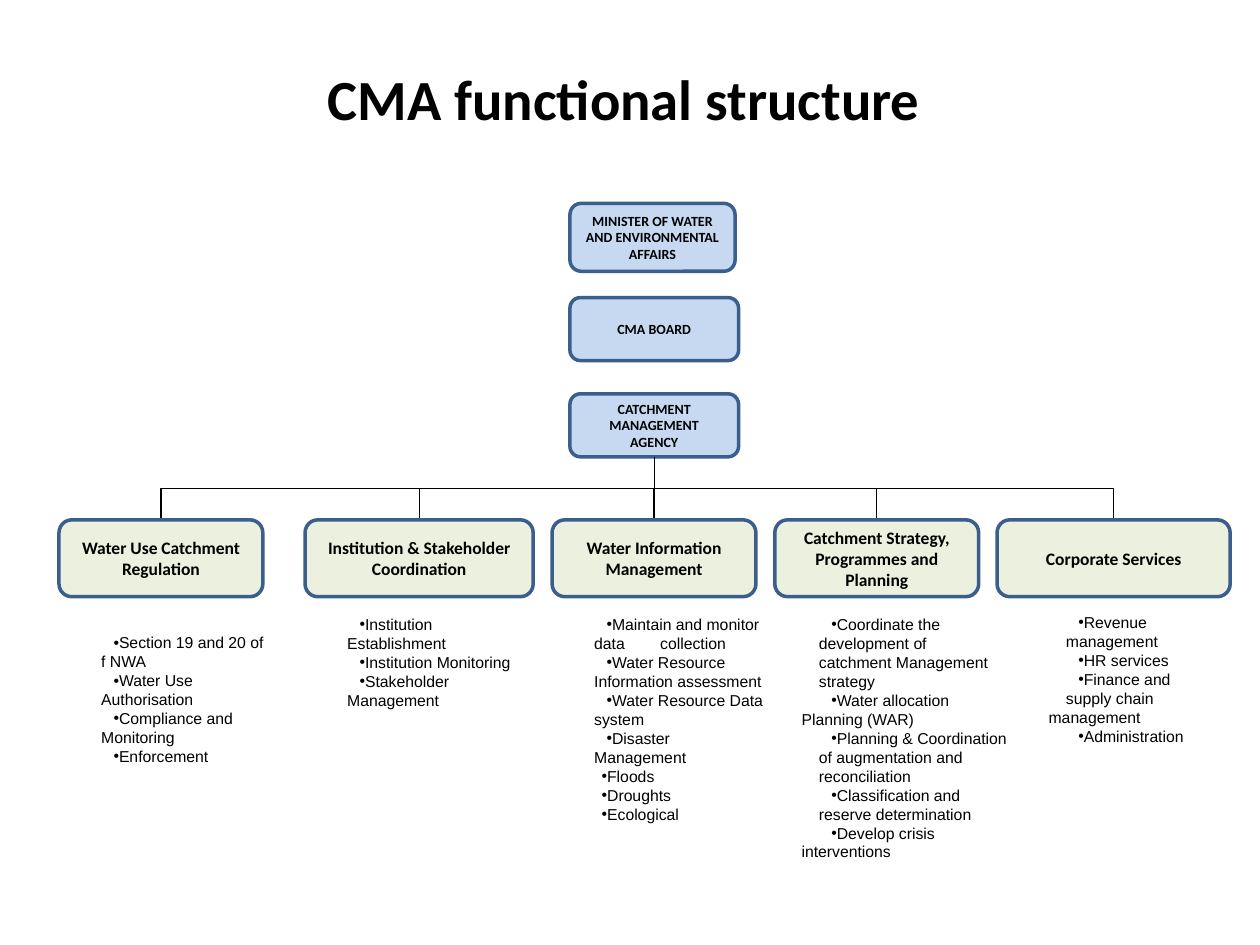
from lxml.etree import SubElement
from pptx import Presentation
from pptx.dml.color import RGBColor
from pptx.enum.shapes import MSO_CONNECTOR, MSO_SHAPE
from pptx.enum.text import MSO_ANCHOR, MSO_AUTO_SIZE, PP_ALIGN
from pptx.oxml.ns import qn
from pptx.util import Cm, Pt

COLORS = {"text": "000000", "top": "C6D9F1", "function": "EBF1DE", "border": "3A5F8C"}

# Paragraph styles: level, left margin, first-line indent (cm), bulleted
STYLES = {
    "item": (0, 0.6, 0.25, True),
    "sub": (1, 0.25, 0.5, True),
    "plain": (0, 0, 0.25, False),
}

# Governing bodies: name, top, width, height
BODIES_LEFT = 11.49
BODIES = [
    ("MINISTER OF WATER AND ENVIRONMENTAL AFFAIRS", 4.1, 3.33, 1.37),
    ("CMA BOARD", 6, 3.4, 1.27),
    ("CATCHMENT MANAGEMENT AGENCY", 7.94, 3.4, 1.27),
]

# Functions: name, left, width, box of the task list, tasks
FUNCTION_TOP, FUNCTION_HEIGHT = 10.48, 1.55
FUNCTIONS = [
    ("Water Use Catchment Regulation", 1.19, 4.11, (1.19, 12.64, 4.45, 2.57), [
        ("item", "Section 19 and 20 of f NWA"),
        ("item", "Water Use Authorisation"),
        ("item", "Compliance and Monitoring"),
        ("item", "Enforcement")]),
    ("Institution & Stakeholder Coordination", 6.15, 4.6, (6.15, 12.27, 4.55, 1.42), [
        ("item", "Institution Establishment"),
        ("item", "Institution Monitoring"),
        ("item", "Stakeholder Management")]),
    ("Water Information Management", 11.13, 4.11, (11.13, 12.27, 4.52, 4.11), [
        ("item", "Maintain and monitor data\tcollection"),
        ("item", "Water Resource Information assessment"),
        ("item", "Water Resource Data system"),
        ("item", "Disaster Management"),
        ("sub", "Floods"),
        ("sub", "Droughts"),
        ("sub", "Ecological")]),
    ("Catchment Strategy, Programmes and Planning", 15.62, 4.11, (15.66, 12.27, 4.98, 4.11), [
        ("item", "Coordinate the development of\vcatchment Management strategy"),
        ("item", "Water allocation"),
        ("plain", "Planning (WAR)"),
        ("item", "Planning & Coordination of augmentation and reconciliation"),
        ("item", "Classification and reserve determination"),
        ("item", "Develop crisis"),
        ("plain", "interventions")]),
    ("Corporate Services", 20.1, 4.7, (20.64, 12.23, 4.17, 2.18), [
        ("item", "Revenue management"),
        ("item", "HR services"),
        ("item", "Finance and supply chain"),
        ("plain", "management"),
        ("item", "Administration")]),
]


def rgb(name):
    return RGBColor.from_string(COLORS[name])


def format_text(p, font, size, bold=False):
    for r in p.runs:
        r.font.name, r.font.size, r.font.bold = font, Pt(size), bold
        r.font.color.rgb = rgb("text")


def add_title(s, box, text):
    tf = s.shapes.add_textbox(*map(Cm, box)).text_frame
    tf.word_wrap = True
    tf.vertical_anchor = MSO_ANCHOR.MIDDLE
    tf.text = text
    tf.paragraphs[0].alignment = PP_ALIGN.CENTER
    format_text(tf.paragraphs[0], "Calibri", 32.4, True)


def add_node(s, box, text, fill, size):
    sp = s.shapes.add_shape(MSO_SHAPE.ROUNDED_RECTANGLE, *map(Cm, box))
    sp.shadow.inherit = False
    sp.fill.solid()
    sp.fill.fore_color.rgb = rgb(fill)
    sp.line.color.rgb = rgb("border")
    sp.line.width = Pt(2)
    tf = sp.text_frame
    tf.word_wrap = True
    tf.vertical_anchor = MSO_ANCHOR.MIDDLE
    tf.text = text
    tf.paragraphs[0].alignment = PP_ALIGN.CENTER
    format_text(tf.paragraphs[0], "Calibri", size, True)


def add_branch(s, x1, y1, x2, y2):
    """Elbow that leaves downwards: a sideways elbow turned by a quarter."""
    cx, cy = (x1 + x2) / 2, (y1 + y2) / 2
    half_w, half_h = (y2 - y1) / 2, abs(x2 - x1) / 2
    to_right = x2 > x1
    if to_right:
        half_w = -half_w
    line = s.shapes.add_connector(
        MSO_CONNECTOR.ELBOW,
        Cm(cx - half_w), Cm(cy - half_h), Cm(cx + half_w), Cm(cy + half_h))
    line.line.color.rgb = rgb("text")
    line.line.width = Pt(0.75)
    sp_pr = line._element.spPr
    sp_pr.find(qn("a:xfrm")).set("rot", "16200000" if to_right else "5400000")
    SubElement(sp_pr, qn("a:effectLst"))


def add_tasks(s, box, tasks):
    tf = s.shapes.add_textbox(*map(Cm, box)).text_frame
    tf.word_wrap = True
    tf.auto_size = MSO_AUTO_SIZE.SHAPE_TO_FIT_TEXT
    for i, (style, text) in enumerate(tasks):
        p = tf.add_paragraph() if i else tf.paragraphs[0]
        p.text = text
        level, margin, indent, bulleted = STYLES[style]
        p.level = level
        p_pr = p._p.get_or_add_pPr()
        p_pr.set("marL", str(Cm(margin)))
        p_pr.set("indent", str(Cm(indent)))
        if bulleted:
            SubElement(p_pr, qn("a:buFont"), typeface="Arial")
            SubElement(p_pr, qn("a:buChar"), char="•")
        else:
            SubElement(p_pr, qn("a:buNone"))
        if "\t" in text:
            tabs = SubElement(p_pr, qn("a:tabLst"))
            SubElement(tabs, qn("a:tab"), pos=str(Cm(1.93)), algn="l")
        format_text(p, "Arial", 9)


def add_bodies(s):
    for name, top, width, height in BODIES:
        add_node(s, (BODIES_LEFT, top, width, height), name, "top", 8)


def add_functions(s):
    _, top, width, height = BODIES[-1]
    start = BODIES_LEFT + width / 2, top + height
    for name, left, width, task_box, tasks in FUNCTIONS:
        add_branch(s, *start, left + width / 2, FUNCTION_TOP)
        add_node(s, (left, FUNCTION_TOP, width, FUNCTION_HEIGHT), name, "function", 10)
        add_tasks(s, task_box, tasks)


def main():
    prs = Presentation()
    prs.slide_width, prs.slide_height = Cm(25.4), Cm(19.05)
    s = prs.slides.add_slide(prs.slide_layouts[6])
    add_title(s, (1.15, 1.32, 22.86, 1.3), "CMA functional structure")
    add_bodies(s)
    add_functions(s)
    prs.save("out.pptx")


if __name__ == "__main__":
    main()
